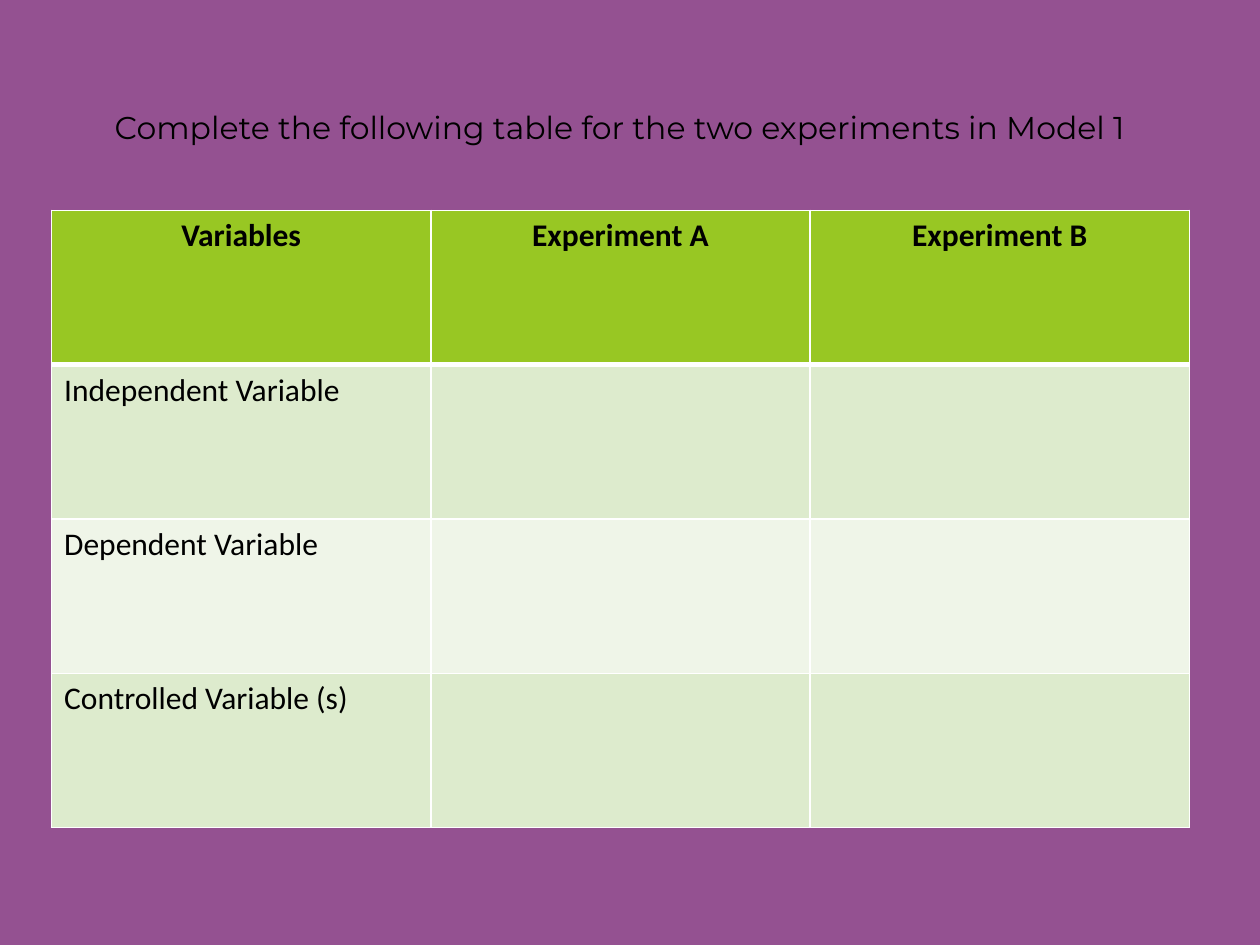
from lxml import etree
from pptx import Presentation
from pptx.dml.color import RGBColor
from pptx.enum.text import MSO_ANCHOR, PP_ALIGN
from pptx.oxml.ns import qn
from pptx.util import Inches, Pt

LEFT, CENTER = PP_ALIGN.LEFT, PP_ALIGN.CENTER
MIDDLE = MSO_ANCHOR.MIDDLE
TITLE_ONLY = 5

PURPLE = RGBColor(0x94, 0x51, 0x91)
GREEN = RGBColor(0x98, 0xC7, 0x23)
BANDS = RGBColor(0xDD, 0xEB, 0xCD), RGBColor(0xEF, 0xF5, 0xE8)
BLACK = RGBColor(0, 0, 0)
WHITE = RGBColor(0xFF, 0xFF, 0xFF)

# The grid has 100 columns and 75 rows
COLS, ROWS = 100, 75

TITLE = "Complete the following table for the two experiments in Model 1"
DATA = [
    ["Variables", "Experiment A", "Experiment B"],
    ["Independent Variable", "", ""],
    ["Dependent Variable", "", ""],
    ["Controlled Variable (s)", "", ""],
]


class Deck:
    head_font, body_font, size = "Montserrat", "Calibri", Pt(18)

    def __init__(self):
        self.prs = Presentation()
        self.prs.slide_width, self.prs.slide_height = Inches(10), Inches(7.5)
        self.slide = self.prs.slides.add_slide(self.prs.slide_layouts[TITLE_ONLY])
        fill = self.slide.background.fill
        fill.solid()
        fill.fore_color.rgb = PURPLE

    def place(self, col, row, wide, high):
        """Turn grid columns and rows into slide lengths."""
        x, y = self.prs.slide_width / COLS, self.prs.slide_height / ROWS
        return int(col * x), int(row * y), int(wide * x), int(high * y)

    def label(self, frame, text, face, align, bold=False):
        para = frame.paragraphs[0]
        para.alignment = align
        run = para.add_run()
        run.text = text
        font = run.font
        font.name, font.size, font.bold = face, self.size, bold
        font.color.rgb = BLACK

    def title(self, text, *area):
        box = self.slide.shapes.title
        box.left, box.top, box.width, box.height = self.place(*area)
        frame = box.text_frame
        frame.word_wrap = True
        frame.vertical_anchor = MIDDLE
        self.label(frame, text, self.head_font, CENTER)

    def edge(self, cell, side, width):
        props = cell._tc.get_or_add_tcPr()
        line = etree.SubElement(props, qn(f"a:ln{side}"), w=str(Pt(width)))
        fill = etree.SubElement(line, qn("a:solidFill"))
        etree.SubElement(fill, qn("a:srgbClr"), val=str(WHITE))

    def table(self, data, *area):
        shape = self.slide.shapes.add_table(len(data), len(data[0]), *self.place(*area))
        grid = shape.table
        for r, row in enumerate(data):
            head = r == 0
            for c, text in enumerate(row):
                cell = grid.cell(r, c)
                # A thick rule parts the header from the body
                top, bottom = (3 if r == 1 else 1), (3 if head else 1)
                for side, width in zip("LRTB", (1, 1, top, bottom)):
                    self.edge(cell, side, width)
                cell.fill.solid()
                cell.fill.fore_color.rgb = GREEN if head else BANDS[(r - 1) % 2]
                if text:
                    align = CENTER if head else LEFT
                    self.label(cell.text_frame, text, self.body_font, align, head)


def main():
    deck = Deck()
    # Heading
    deck.title(TITLE, 6.3, 5, 85.8, 10.1)
    # Variables of each experiment
    deck.table(DATA, 4.1, 16.7, 90.3, 49)
    deck.prs.save("out.pptx")


if __name__ == "__main__":
    main()
